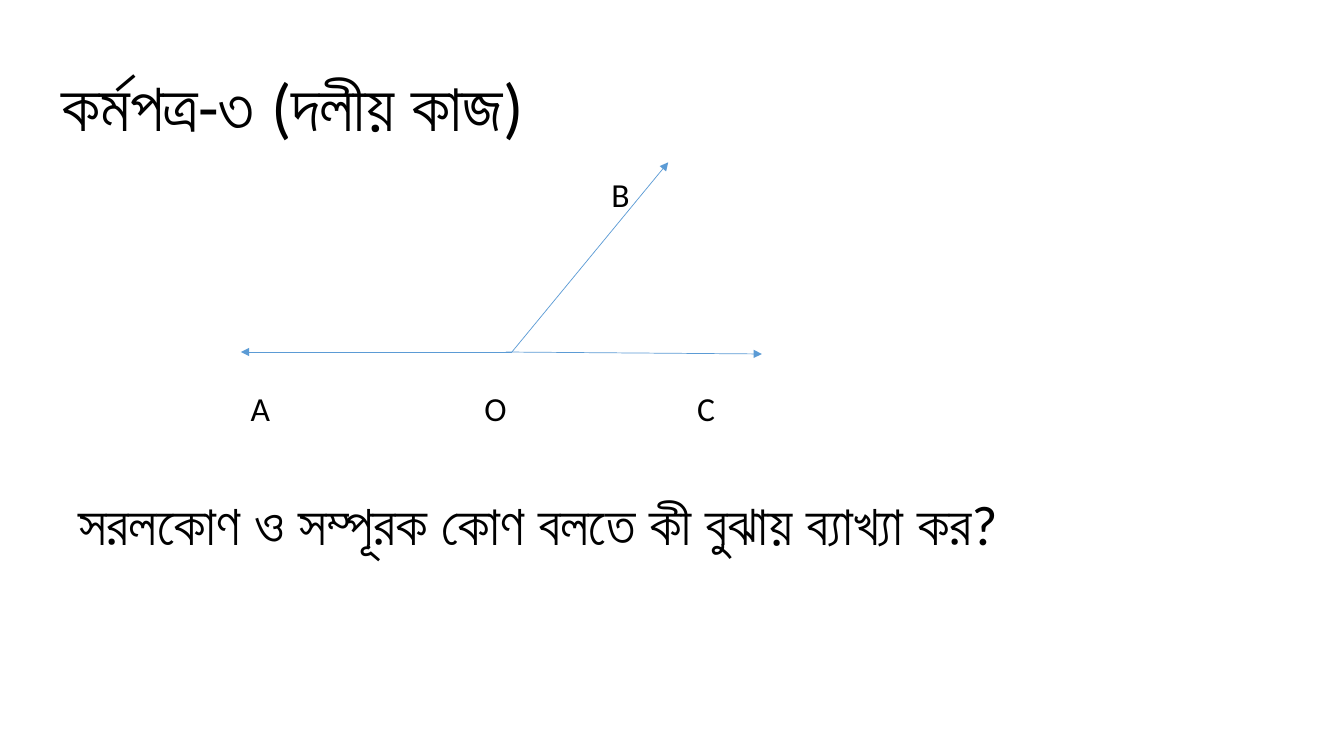
from lxml.etree import SubElement
from pptx import Presentation
from pptx.dml.color import RGBColor
from pptx.enum.shapes import MSO_CONNECTOR as Connector
from pptx.enum.text import MSO_AUTO_SIZE as AutoSize
from pptx.oxml.ns import qn
from pptx.util import Cm, Pt

BLACK = "000000"
BLUE = "5B9BD5"


def color(hex_value):
    return RGBColor.from_string(hex_value)


def add_text(slide, box, text, size):
    frame = slide.shapes.add_textbox(*map(Cm, box)).text_frame
    frame.word_wrap = True
    frame.auto_size = AutoSize.SHAPE_TO_FIT_TEXT
    paragraph = frame.paragraphs[0]
    paragraph.text = text
    paragraph.font.name = "Calibri"
    paragraph.font.size = Pt(size)
    paragraph.font.color.rgb = color(BLACK)


def add_ray(slide, start, end):
    ray = slide.shapes.add_connector(Connector.STRAIGHT, *map(Cm, start + end))
    ray.line.color.rgb = color(BLUE)
    ray.line.width = Pt(0.5)
    SubElement(ray.line._get_or_add_ln(), qn("a:tailEnd"), type="triangle")
    SubElement(ray._element.spPr, qn("a:effectLst"))


def add_angle_diagram(slide, left, top):
    # Rays OA, OC and OB, measured from the diagram's corner
    baseline = 4.78
    rays = [
        ((6.83, baseline), (0, baseline)),
        ((6.68, baseline), (13.13, 4.83)),
        ((6.83, baseline), (10.77, 0)),
    ]
    for (x1, y1), (x2, y2) in rays:
        add_ray(slide, (left + x1, top + y1), (left + x2, top + y2))

    # Point labels: A, O and C share a row below the baseline
    label_row = 5.56
    labels = [
        ("A", 0, label_row, 2.18),
        ("B", 9.09, 0.18, 1.68),
        ("C", 11.25, label_row, 1.35),
        ("O", 5.89, label_row, 2.34),
    ]
    for point, x, y, width in labels:
        add_text(slide, (left + x, top + y, width, 1.27), point, 24)


def main():
    deck = Presentation()
    deck.slide_width, deck.slide_height = Cm(33.87), Cm(19.05)
    worksheet = deck.slides.add_slide(deck.slide_layouts[6])

    # Heading, figure and question
    add_text(worksheet, (1.3, 1.5, 14.3, 2.31), "কর্মপত্র-৩ (দলীয় কাজ)", 48)
    add_angle_diagram(worksheet, 6.07, 4.09)
    add_text(worksheet, (1.73, 12.22, 30.05, 1.96),
             "সরলকোণ ও সম্পূরক কোণ বলতে কী বুঝায় ব্যাখ্যা কর?", 40)

    deck.save("out.pptx")


if __name__ == "__main__":
    main()
